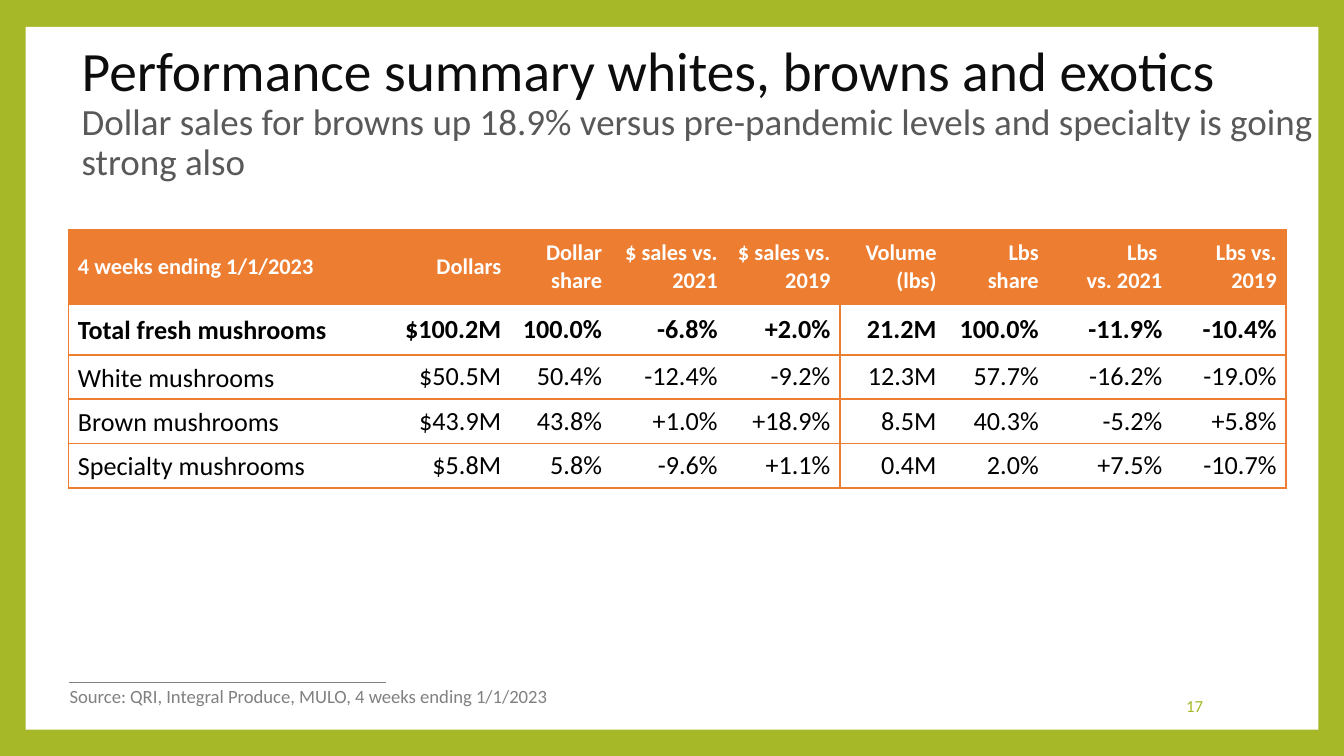
from dataclasses import dataclass

from lxml import etree
from pptx import Presentation
from pptx.dml.color import RGBColor
from pptx.enum.shapes import MSO_CONNECTOR, MSO_SHAPE
from pptx.enum.text import MSO_ANCHOR, PP_ALIGN
from pptx.oxml.ns import qn
from pptx.util import Inches, Pt

LEFT, RIGHT = PP_ALIGN.LEFT, PP_ALIGN.RIGHT
TOP, MIDDLE = MSO_ANCHOR.TOP, MSO_ANCHOR.MIDDLE
RECTANGLE = MSO_SHAPE.RECTANGLE
STRAIGHT = MSO_CONNECTOR.STRAIGHT

GREEN = RGBColor(0xA6, 0xB7, 0x27)
ORANGE = RGBColor(0xED, 0x7D, 0x31)
WHITE = RGBColor(0xFF, 0xFF, 0xFF)
BLACK = RGBColor(0, 0, 0)
TITLE_INK = RGBColor(0x0D, 0x0D, 0x0D)
SUBTITLE_INK = RGBColor(0x59, 0x59, 0x59)
GREY = RGBColor(0x80, 0x80, 0x80)
FONT = "Calibri"

SLIDE_WIDTH = 10
SLIDE_HEIGHT = SLIDE_WIDTH * 9 / 16

COLUMN_WIDTHS = [2.41, 0.88, 0.75, 0.86, 0.84, 0.79, 0.76, 0.92, 0.85]
ROW_HEIGHTS = [0.55, 0.38, 0.33, 0.33, 0.33]
FIRST_VOLUME_COLUMN = 5
ROWS = [
    ["4 weeks ending 1/1/2023", "Dollars", "Dollar share", "$ sales vs. 2021",
     "$ sales vs. 2019", "Volume (lbs)", "Lbs\nshare", "Lbs \vvs. 2021", "Lbs vs. 2019"],
    ["Total fresh mushrooms", "$100.2M", "100.0%", "-6.8%", "+2.0%",
     "21.2M", "100.0%", "-11.9%", "-10.4%"],
    ["White mushrooms", "$50.5M", "50.4%", "-12.4%", "-9.2%",
     "12.3M", "57.7%", "-16.2%", "-19.0%"],
    ["Brown mushrooms", "$43.9M", "43.8%", "+1.0%", "+18.9%",
     "8.5M", "40.3%", "-5.2%", "+5.8%"],
    ["Specialty mushrooms", "$5.8M", "5.8%", "-9.6%", "+1.1%",
     "0.4M", "2.0%", "+7.5%", "-10.7%"],
]


@dataclass
class Style:
    size: float
    color: RGBColor
    bold: bool = False


@dataclass
class Label:
    """A text box; each line of its paragraph has its own style."""
    left: float
    top: float
    width: float
    height: float
    text: str
    styles: list[Style]
    align: PP_ALIGN = LEFT
    anchor: MSO_ANCHOR = MIDDLE
    wrap: bool = True
    spacing: float = 1.0


LABELS = [
    Label(0.51, 0.45, 9.37, 0.79,
          "Performance summary whites, browns and exotics\v"
          "Dollar sales for browns up 18.9% versus pre-pandemic levels "
          "and specialty is going strong also",
          [Style(29.7, TITLE_INK), Style(19.8, SUBTITLE_INK)], spacing=0.9),
    Label(7.65, 5.1, 1.4, 0.3, "17", [Style(9, GREEN)], align=RIGHT),
    Label(0.42, 5.05, 3.76, 0.27,
          "Source: QRI, Integral Produce, MULO, 4 weeks ending 1/1/2023",
          [Style(10, GREY)], anchor=TOP, wrap=False),
]


def style_run(r, style: Style) -> None:
    r.font.name = FONT
    r.font.size = Pt(style.size)
    r.font.bold = style.bold
    r.font.color.rgb = style.color


def add_label(slide, label: Label) -> None:
    sp = slide.shapes.add_textbox(Inches(label.left), Inches(label.top),
                                  Inches(label.width), Inches(label.height))
    tf = sp.text_frame
    tf.word_wrap = label.wrap
    tf.vertical_anchor = label.anchor
    p = tf.paragraphs[0]
    p.text = label.text
    p.alignment = label.align
    p.line_spacing = label.spacing
    for r, style in zip(p.runs, label.styles):
        style_run(r, style)


def add_border(cell, side: str, visible: bool) -> None:
    """Draw or clear one cell side: L, R, T or B, called in that order."""
    ln = etree.SubElement(cell._tc.get_or_add_tcPr(), qn(f"a:ln{side}"), w=str(Pt(1)))
    if visible:
        fill = etree.SubElement(ln, qn("a:solidFill"))
        etree.SubElement(fill, qn("a:srgbClr"), val=str(ORANGE))
    else:
        etree.SubElement(ln, qn("a:noFill"))


def fill_cell(cell, row: int, col: int) -> None:
    header, total = row == 0, row == 1
    block_starts = (0, FIRST_VOLUME_COLUMN)
    block_ends = (FIRST_VOLUME_COLUMN - 1, len(COLUMN_WIDTHS) - 1)
    add_border(cell, "L", col in block_starts)
    add_border(cell, "R", col in block_ends)
    add_border(cell, "T", True)
    add_border(cell, "B", True)
    if header:
        cell.fill.solid()
        cell.fill.fore_color.rgb = ORANGE
        style = Style(12, WHITE, True)
    else:
        cell.fill.background()
        style = Style(14, BLACK, total)

    cell.margin_left = cell.margin_right = Inches(0.07)
    cell.margin_top = cell.margin_bottom = 0
    cell.vertical_anchor = MIDDLE
    cell.text_frame.text = ROWS[row][col]
    for p in cell.text_frame.paragraphs:
        p.alignment = RIGHT if col else LEFT
        if not header and col == 0:
            p.line_spacing = 1.07
        for r in p.runs:
            style_run(r, style)


def add_sales_table(slide) -> None:
    frame = slide.shapes.add_table(len(ROWS), len(COLUMN_WIDTHS), Inches(0.51), Inches(1.71),
                                   Inches(sum(COLUMN_WIDTHS)), Inches(sum(ROW_HEIGHTS)))
    table = frame.table
    table.first_row = table.horz_banding = False
    for column, width in zip(table.columns, COLUMN_WIDTHS):
        column.width = Inches(width)
    for i, height in enumerate(ROW_HEIGHTS):
        table.rows[i].height = Inches(height)
        for j in range(len(COLUMN_WIDTHS)):
            fill_cell(table.cell(i, j), i, j)


def add_page(slide) -> None:
    """Green frame around a white page, with the rule above the source."""
    slide.background.fill.solid()
    slide.background.fill.fore_color.rgb = GREEN
    page = slide.shapes.add_shape(RECTANGLE, Inches(0.19), Inches(0.2),
                                  Inches(9.62), Inches(5.23))
    page.shadow.inherit = False
    page.fill.solid()
    page.fill.fore_color.rgb = WHITE
    page.line.fill.background()

    rule = slide.shapes.add_connector(STRAIGHT, Inches(0.51), Inches(5.08),
                                      Inches(2.87), Inches(5.08))
    rule.line.color.rgb = GREY
    rule.line.width = Pt(0.79)
    etree.SubElement(rule._element.spPr, qn("a:effectLst"))


def main() -> None:
    prs = Presentation()
    prs.slide_width, prs.slide_height = Inches(SLIDE_WIDTH), Inches(SLIDE_HEIGHT)
    slide = prs.slides.add_slide(prs.slide_layouts[6])
    add_page(slide)
    for label in LABELS:
        add_label(slide, label)
    add_sales_table(slide)
    prs.save("out.pptx")


if __name__ == "__main__":
    main()
